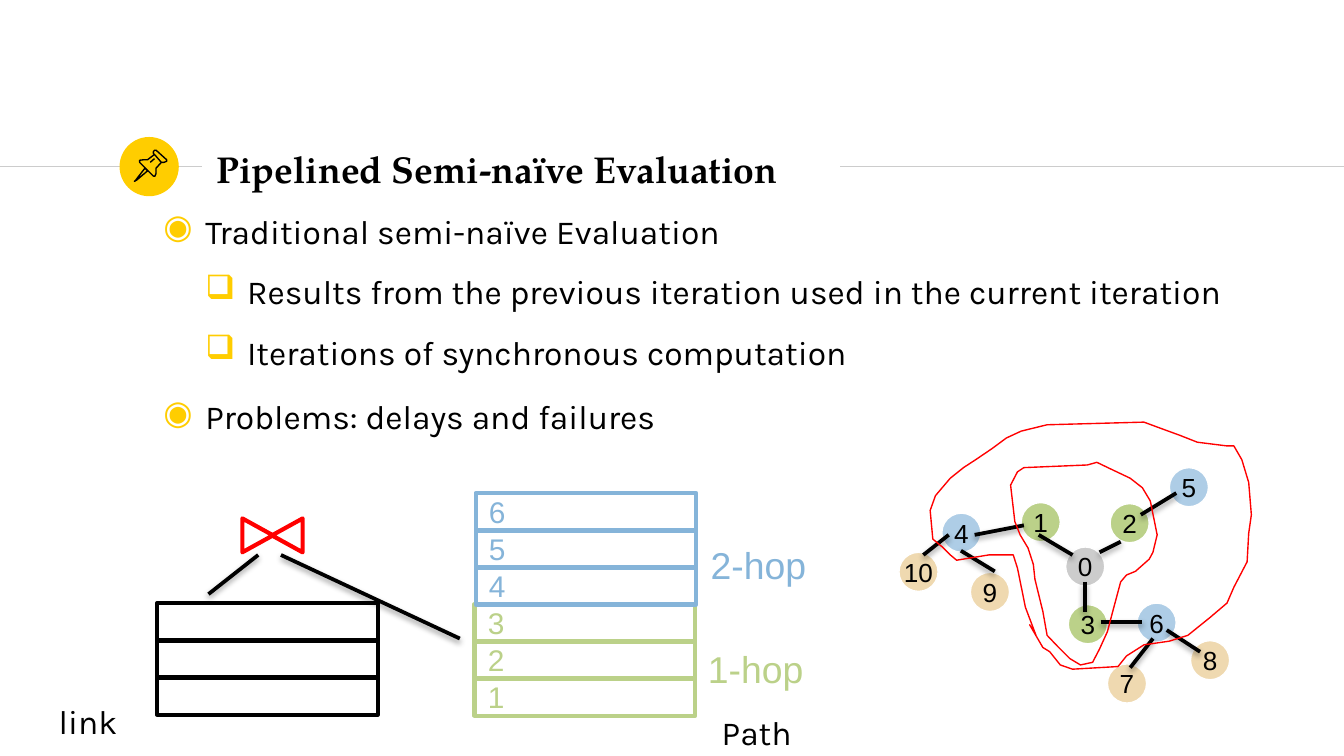
from lxml import etree
from pptx import Presentation
from pptx.dml.color import RGBColor
from pptx.enum.shapes import MSO_CONNECTOR, MSO_SHAPE
from pptx.enum.text import MSO_ANCHOR, MSO_AUTO_SIZE, PP_ALIGN
from pptx.oxml.ns import qn
from pptx.util import Cm, Pt

STRAIGHT = MSO_CONNECTOR.STRAIGHT
OVAL = MSO_SHAPE.OVAL
RECTANGLE = MSO_SHAPE.RECTANGLE
TRIANGLE = MSO_SHAPE.ISOSCELES_TRIANGLE
MIDDLE = MSO_ANCHOR.MIDDLE
NO_AUTOFIT = MSO_AUTO_SIZE.NONE
LEFT, CENTER = PP_ALIGN.LEFT, PP_ALIGN.CENTER

BLACK = RGBColor(0x00, 0x00, 0x00)
WHITE = RGBColor(0xFF, 0xFF, 0xFF)
GRAY = RGBColor(0xCC, 0xCC, 0xCC)
YELLOW = RGBColor(0xFF, 0xCD, 0x00)
RED = RGBColor(0xFF, 0x00, 0x00)
GREEN = RGBColor(0xBB, 0xD1, 0x89)
BLUE = RGBColor(0x85, 0xB4, 0xD9)
LIGHT_BLUE = RGBColor(0xAE, 0xCD, 0xE6)
SAND = RGBColor(0xEF, 0xD9, 0xB0)


def paint(shape, fill=None, line=None, width=0.75):
    shape.shadow.inherit = False
    if fill is None:
        shape.fill.background()
    else:
        shape.fill.solid()
        shape.fill.fore_color.rgb = fill
    if line is None:
        shape.line.fill.background()
    else:
        shape.line.color.rgb = line
        shape.line.width = Pt(width)


def write(paragraph, text, font, size, color=BLACK, align=LEFT):
    paragraph.text = text
    paragraph.alignment = align
    for run in paragraph.runs:
        run.font.name = font
        run.font.size = Pt(size)
        run.font.color.rgb = color


prs = Presentation()
prs.slide_width, prs.slide_height = Cm(25.4), Cm(14.29)
slide = prs.slides.add_slide(prs.slide_layouts[5])
shapes = slide.shapes

title = shapes.title
title.left, title.top, title.width, title.height = Cm(3.84), Cm(2.57), Cm(14.58), Cm(1.22)
title.text_frame.auto_size = NO_AUTOFIT
title.text_frame.vertical_anchor = MIDDLE
write(title.text_frame.paragraphs[0], "Pipelined Semi-naïve Evaluation", "TeX Gyre Pagella", 20)
title.text_frame.paragraphs[0].runs[0].font.bold = True

for start, end in [(0, 3.81), (15.88, 25.4)]:
    divider = shapes.add_connector(STRAIGHT, Cm(start), Cm(3.15), Cm(end), Cm(3.15))
    divider.line.color.rgb = GRAY
    divider.line.width = Pt(0.75)
    etree.SubElement(divider._element.spPr, qn("a:effectLst"))

badge = shapes.add_shape(OVAL, Cm(2.26), Cm(2.59), Cm(1.12), Cm(1.12))
paint(badge, YELLOW)

bullets = [
    ("Traditional semi-naïve Evaluation", "◉", 1.42, 0),
    ("Results from the previous iteration used in the current iteration", "❑", 2.21, 0),
    ("Iterations of synchronous computation", "❑", 2.21, 0),
    ("Problems: delays and failures", "◉", 1.42, 2),
]
body = shapes.add_textbox(Cm(2.21), Cm(3.48), Cm(22.89), Cm(4.8)).text_frame
body.word_wrap = True
for index, (text, mark, indent, space) in enumerate(bullets):
    paragraph = body.add_paragraph() if index else body.paragraphs[0]
    write(paragraph, text, "Karla", 18)
    paragraph.line_spacing = 1.5
    paragraph.space_before = Pt(space)
    properties = paragraph._p.get_or_add_pPr()
    properties.set("marL", str(Cm(indent)))
    properties.set("indent", str(Cm(-0.79)))
    bullet_color = etree.SubElement(properties, qn("a:buClr"))
    etree.SubElement(bullet_color, qn("a:srgbClr"), val=str(YELLOW))
    etree.SubElement(properties, qn("a:buChar"), char=mark)

nodes = [
    ("1", 19.67, 9.87, GREEN), ("2", 21.35, 9.89, GREEN), ("0", 20.51, 10.71, GRAY),
    ("4", 18.17, 10.07, LIGHT_BLUE), ("3", 20.56, 11.8, GREEN), ("6", 21.86, 11.77, LIGHT_BLUE),
    ("5", 22.47, 9.21, LIGHT_BLUE), ("9", 18.71, 11.19, SAND), ("8", 22.87, 12.48, SAND),
    ("7", 21.3, 12.92, SAND), ("10", 17.36, 10.81, SAND),
]
diameter = 0.74
for label, x, y, color in nodes:
    node = shapes.add_shape(OVAL, Cm(x - diameter / 2), Cm(y - diameter / 2), Cm(diameter), Cm(diameter))
    paint(node, color, WHITE)
    frame = node.text_frame
    frame.margin_left = frame.margin_right = frame.margin_top = frame.margin_bottom = 0
    frame.word_wrap = False
    frame.vertical_anchor = MIDDLE
    write(frame.paragraphs[0], label, "Arial", 14, align=CENTER)

row_width, row_height, row_pitch = 4.17, 0.71, 0.7
for row in range(3):
    link_row = shapes.add_shape(RECTANGLE, Cm(2.97), Cm(11.4 + row * row_pitch), Cm(row_width), Cm(row_height))
    paint(link_row, line=BLACK, width=2.25)

for left, top, labels, color in [(8.97, 11.42, "321", GREEN), (8.99, 9.32, "654", BLUE)]:
    for row, label in enumerate(labels):
        path_row = shapes.add_shape(RECTANGLE, Cm(left), Cm(top + row * row_pitch), Cm(row_width), Cm(row_height))
        paint(path_row, line=color, width=2.25)
        path_row.text_frame.word_wrap = False
        path_row.text_frame.vertical_anchor = MIDDLE
        write(path_row.text_frame.paragraphs[0], label, "Arial", 16, color)

captions = [
    ("1-hop", 13.13, 12.09, 3, "Arial", 20, GREEN),
    ("2-hop", 13.18, 10.13, 3, "Arial", 20, BLUE),
    ("link", 0.86, 13.13, 1.68, "Karla", 18, BLACK),
    ("Path", 13.39, 13.34, 2.74, "Karla", 18, BLACK),
]
for text, left, top, width, font, size, color in captions:
    caption = shapes.add_textbox(Cm(left), Cm(top), Cm(width), Cm(1.02)).text_frame
    caption.word_wrap = True
    write(caption.paragraphs[0], text, font, size, color)

graph_edges = [
    (20.5, 11, 20.5, 11.56), (19.63, 10.11, 20.27, 10.49), (21.18, 10.24, 20.78, 10.44),
    (18.42, 10.11, 19.35, 9.93), (18.16, 10.41, 18.8, 10.8), (17.93, 10.11, 17.45, 10.49),
    (21.56, 9.73, 22.23, 9.32), (20.8, 11.76, 21.59, 11.76), (22.05, 11.91, 22.68, 12.32),
    (21.79, 12.07, 21.36, 12.62),
]
join_inputs = [(3.94, 11.23, 4.88, 10.49), (8.69, 12.07, 5.31, 10.49)]
for ends in graph_edges + join_inputs:
    edge = shapes.add_connector(STRAIGHT, *[Cm(value) for value in ends])
    edge.line.color.rgb = BLACK
    edge.line.width = Pt(2)
    effects = etree.SubElement(edge._element.spPr, qn("a:effectLst"))
    shadow = etree.SubElement(effects, qn("a:outerShdw"), blurRad="40000", dist="20000", dir="5400000", rotWithShape="0")
    shadow_color = etree.SubElement(shadow, qn("a:srgbClr"), val=str(BLACK))
    etree.SubElement(shadow_color, qn("a:alpha"), val="38000")

for left, rotation in [(5.11, 270), (4.55, 90)]:
    join_half = shapes.add_shape(TRIANGLE, Cm(left), Cm(9.83), Cm(0.64), Cm(0.58))
    join_half.rotation = rotation
    paint(join_half, line=RED, width=2.25)

pin_tip = [(274, 318), (257, 340), (254, 343), (259, 340), (279, 323)]
pin_head = [(292, 292), (305, 307), (310, 307), (315, 305), (315, 302), (295, 284), (292, 284), (290, 287), (290, 290)]
pin_body = [(292, 292), (279, 302), (272, 302), (264, 303), (264, 307), (290, 333), (293, 333), (295, 328),
            (295, 318), (305, 307)]
pin_shine = [(284, 307), (292, 300)]
one_hop_loop = [
    (2055, 879), (1935, 884), (1923, 892), (1910, 917), (1918, 986), (1928, 1011), (1943, 1036), (1953, 1067),
    (1956, 1095), (1971, 1156), (1979, 1201), (1999, 1222), (2022, 1245), (2042, 1257), (2065, 1252), (2078, 1227),
    (2093, 1194), (2103, 1156), (2118, 1100), (2129, 1087), (2146, 1080), (2172, 1057), (2179, 1044), (2187, 1011),
    (2174, 947), (2159, 922), (2136, 904), (2098, 886), (2073, 874),
]
two_hop_loop = [
    (2319, 843), (2263, 836), (2230, 823), (2189, 808), (2162, 798), (1979, 803), (1930, 815), (1902, 828),
    (1875, 848), (1844, 869), (1821, 884), (1796, 904), (1768, 937), (1758, 965), (1763, 1019), (1781, 1034),
    (1796, 1049), (1808, 1059), (1869, 1049), (1915, 1049), (1923, 1074), (1938, 1148), (1958, 1201), (1946, 1181),
    (1971, 1224), (1984, 1232), (2004, 1257), (2027, 1265), (2113, 1260), (2129, 1240), (2162, 1219), (2210, 1212),
    (2245, 1201), (2286, 1168), (2319, 1140), (2332, 1110), (2357, 1062), (2360, 1008), (2365, 973), (2360, 912),
    (2347, 869), (2332, 843),
]
outlines = [
    (pin_tip, True, BLACK), (pin_head, True, BLACK), (pin_body, False, BLACK), (pin_shine, False, BLACK),
    (one_hop_loop, True, RED), (two_hop_loop, True, RED),
]
for points, closed, color in outlines:
    builder = shapes.build_freeform(*points[0], scale=Cm(0.01))
    builder.add_line_segments(points[1:], close=closed)
    paint(builder.convert_to_shape(), line=color)

prs.save("out.pptx")
